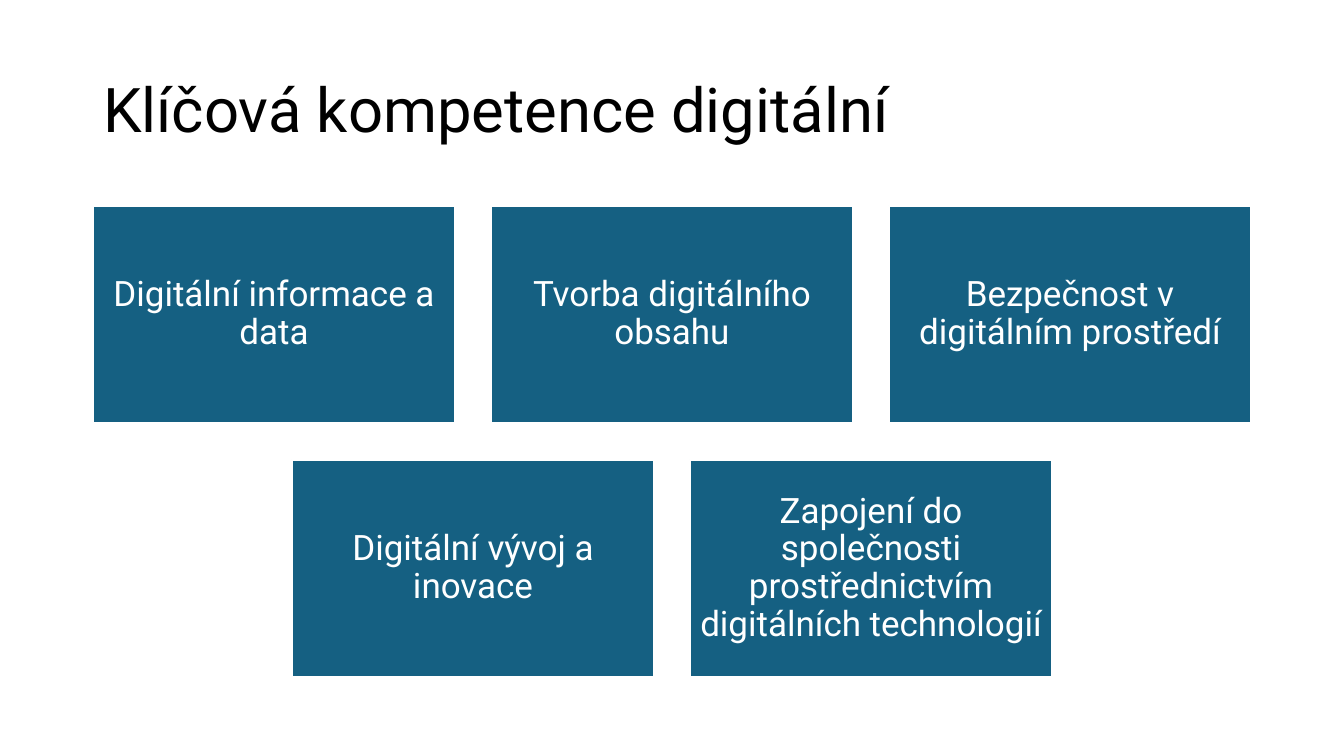
from pptx import Presentation
from pptx import util as u
from pptx.dml.color import RGBColor
from pptx.enum import shapes, text

PX = 914400 / 100.8
THEME = {
    "font": "Roboto",
    "box": RGBColor.from_string("156082"),
    "light": RGBColor.from_string("FFFFFF"),
    "dark": RGBColor.from_string("000000"),
    "title_size": u.Pt(44),
    "box_size": u.Pt(25),
}
SLIDE_W, SLIDE_H = 1344, 756
BOX_W, BOX_H = 362, 217
STEP_X, STEP_Y = 398, 254
TOP = 206
ROWS = [
    ["Digitální informace a data", "Tvorba digitálního obsahu",
     "Bezpečnost v digitálním prostředí"],
    ["Digitální vývoj a inovace",
     "Zapojení do společnosti prostřednictvím digitálních technologií"],
]


def px(n):
    return u.Emu(round(n * PX))


def write(sp, words, size, color, align, inset):
    """Fill a shape with one vertically centred paragraph."""
    tf = sp.text_frame
    frame = {"word_wrap": True, "vertical_anchor": text.MSO_ANCHOR.MIDDLE, **inset}
    for name, value in frame.items():
        setattr(tf, name, value)
    p = tf.paragraphs[0]
    p.alignment, p.line_spacing = align, 0.9
    r = p.add_run()
    r.text = words
    for name, value in {"name": THEME["font"], "size": size}.items():
        setattr(r.font, name, value)
    r.font.color.rgb = color


prs = Presentation()
prs.slide_width, prs.slide_height = px(SLIDE_W), px(SLIDE_H)
slide = prs.slides.add_slide(prs.slide_layouts[5])

title = slide.shapes.title
place = {"left": 93, "top": 40, "width": 1159, "height": 146}
for name, value in place.items():
    setattr(title, name, px(value))
write(title, "Klíčová kompetence digitální", THEME["title_size"], THEME["dark"],
      text.PP_ALIGN.LEFT, {})

box_inset = {f"margin_{side}": px(10) for side in ("left", "top", "right", "bottom")}
for row, labels in enumerate(ROWS):
    row_w = (len(labels) - 1) * STEP_X + BOX_W
    left = (SLIDE_W - row_w) // 2
    for col, label in enumerate(labels):
        sp = slide.shapes.add_shape(
            shapes.MSO_SHAPE.RECTANGLE, px(left + col * STEP_X),
            px(TOP + row * STEP_Y), px(BOX_W), px(BOX_H))
        sp.shadow.inherit = False
        sp.fill.solid()
        sp.fill.fore_color.rgb = THEME["box"]
        sp.line.color.rgb = THEME["light"]
        sp.line.width = u.Pt(1.5)
        write(sp, label, THEME["box_size"], THEME["light"],
              text.PP_ALIGN.CENTER, box_inset)

prs.save("out.pptx")
